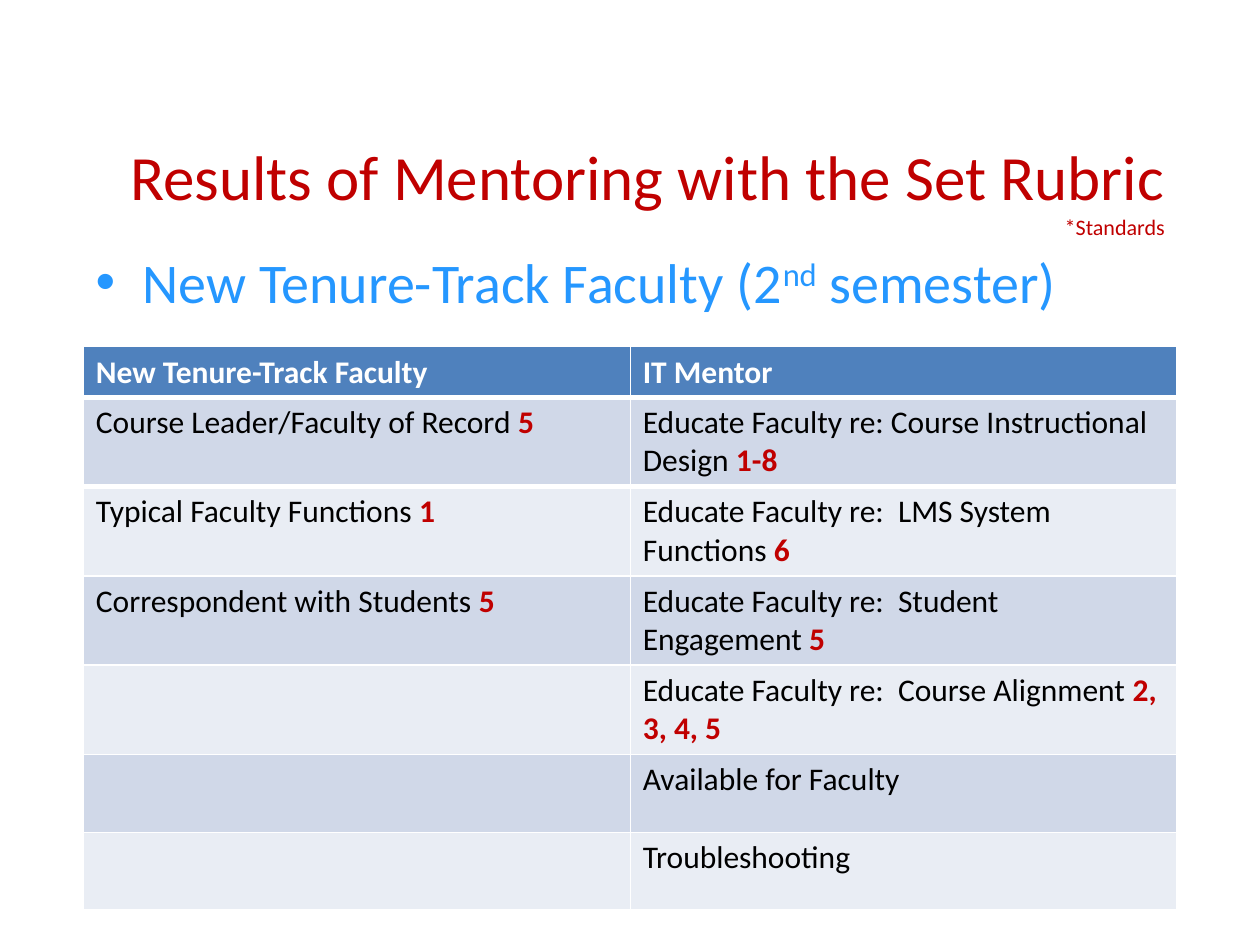
from dataclasses import dataclass

from lxml import etree
from pptx import Presentation, util as u
from pptx.dml.color import RGBColor
from pptx.enum import text
from pptx.oxml import ns


@dataclass(frozen=True)
class Theme:
    font: str = "Calibri"
    accent: str = "C00000"
    subtitle: str = "2597FF"
    header_text: str = "FFFFFF"
    header_fill: str = "4F81BD"
    border: str = "FFFFFF"
    body_text: str = "000000"
    bands: tuple = ("D0D8E8", "E9EDF4")
    title_size: float = 36
    note_size: float = 12.6
    subtitle_size: float = 32
    table_size: float = 18


def add_text(paragraph, content, *, font, size, color, bold=False, baseline=0):
    """Append a run; baseline is its rise in percent of the type size."""
    run = paragraph.add_run()
    run.text = content
    run.font.name = font
    run.font.size = u.Pt(size)
    run.font.bold = bold
    run.font.color.rgb = RGBColor.from_string(color)
    if baseline:
        run._r.get_or_add_rPr().set("baseline", str(baseline * 1000))


class SlideBuilder:
    def __init__(self, slide, theme):
        self.slide = slide
        self.theme = theme

    def text_box(self, left, top, width, height, anchor):
        """Add a wrapping text box and return its first paragraph."""
        frame = self.slide.shapes.add_textbox(
            u.Cm(left), u.Cm(top), u.Cm(width), u.Cm(height)).text_frame
        frame.word_wrap = True
        frame.vertical_anchor = anchor
        return frame.paragraphs[0]

    def title(self, heading, note, *box):
        theme = self.theme
        paragraph = self.text_box(*box, text.MSO_ANCHOR.MIDDLE)
        paragraph.alignment = text.PP_ALIGN.RIGHT
        style = dict(font=theme.font, color=theme.accent)
        add_text(paragraph, heading, size=theme.title_size, **style)
        paragraph.add_line_break()
        add_text(paragraph, note, size=theme.note_size, **style)

    def bullet(self, parts, *box):
        """Add one bulleted line from (text, baseline) parts."""
        theme = self.theme
        paragraph = self.text_box(*box, text.MSO_ANCHOR.TOP)
        properties = paragraph._p.get_or_add_pPr()
        indent = u.Cm(0.95)
        properties.set("marL", str(indent))
        properties.set("indent", str(-indent))
        bullet_font = etree.SubElement(properties, ns.qn("a:buFont"))
        bullet_font.set("typeface", "Arial")
        etree.SubElement(properties, ns.qn("a:buChar")).set("char", "•")
        for content, baseline in parts:
            add_text(paragraph, content, font=theme.font, size=theme.subtitle_size,
                     color=theme.subtitle, baseline=baseline)

    def table(self, header, rows, heights, left, top, width):
        theme = self.theme
        table = self.slide.shapes.add_table(
            len(rows) + 1, len(header), u.Cm(left), u.Cm(top),
            u.Cm(width), u.Cm(sum(heights))).table
        for row, height in zip(table.rows, heights):
            row.height = u.Cm(height)
        for column, label in enumerate(header):
            self.cell(table.cell(0, column), theme.header_fill,
                      [(label, theme.header_text, True)])
            self.border(table.cell(0, column), "a:lnB", 3)
            self.border(table.cell(1, column), "a:lnT", 3)
        for index, row in enumerate(rows):
            for column, (duty, standards) in enumerate(row):
                self.cell(table.cell(index + 1, column),
                          theme.bands[index % len(theme.bands)],
                          [(duty, theme.body_text, False),
                           (standards, theme.accent, True)])

    def border(self, cell, side, points):
        line = etree.Element(ns.qn(side), w=str(u.Pt(points)))
        fill = etree.SubElement(line, ns.qn("a:solidFill"))
        etree.SubElement(fill, ns.qn("a:srgbClr"), val=self.theme.border)
        cell._tc.get_or_add_tcPr().insert(0, line)

    def cell(self, cell, fill, parts):
        """Fill a cell and write its (text, color, bold) parts."""
        cell.fill.solid()
        cell.fill.fore_color.rgb = RGBColor.from_string(fill)
        paragraph = cell.text_frame.paragraphs[0]
        paragraph.font.size = u.Pt(self.theme.table_size)
        for content, color, bold in parts:
            if content:
                add_text(paragraph, content, font=self.theme.font,
                         size=self.theme.table_size, color=color, bold=bold)


HEADER = ("New Tenure-Track Faculty", "IT Mentor")
EMPTY = ("", "")
ROWS = [
    (("Course Leader/Faculty of Record ", "5"),
     ("Educate Faculty re: Course Instructional Design ", "1-8")),
    (("Typical Faculty Functions ", "1"),
     ("Educate Faculty re:  LMS System Functions ", "6")),
    (("Correspondent with Students ", "5"),
     ("Educate Faculty re:  Student Engagement ", "5")),
    (EMPTY, ("Educate Faculty re:  Course Alignment ", "2, 3, 4, 5")),
    (EMPTY, ("Available for Faculty", "")),
    (EMPTY, ("Troubleshooting", "")),
]
ROW_HEIGHTS = [1.0] + [1.8] * 4 + [1.57] * 2


def main():
    presentation = Presentation()
    presentation.slide_width = u.Cm(25.4)
    presentation.slide_height = u.Cm(19.05)
    slide = presentation.slides.add_slide(presentation.slide_layouts[6])
    builder = SlideBuilder(slide, Theme())
    left, width = 1.68, 22.05
    builder.title("Results of Mentoring with the Set Rubric", "*Standards",
                  left, 2.74, width, 2.13)
    builder.bullet([("New Tenure-Track Faculty (2", 0), ("nd", 30), (" semester)", 0)],
                   left, 4.87, width, 12.73)
    builder.table(HEADER, ROWS, ROW_HEIGHTS, left, 6.99, width)
    presentation.save("out.pptx")


if __name__ == "__main__":
    main()
